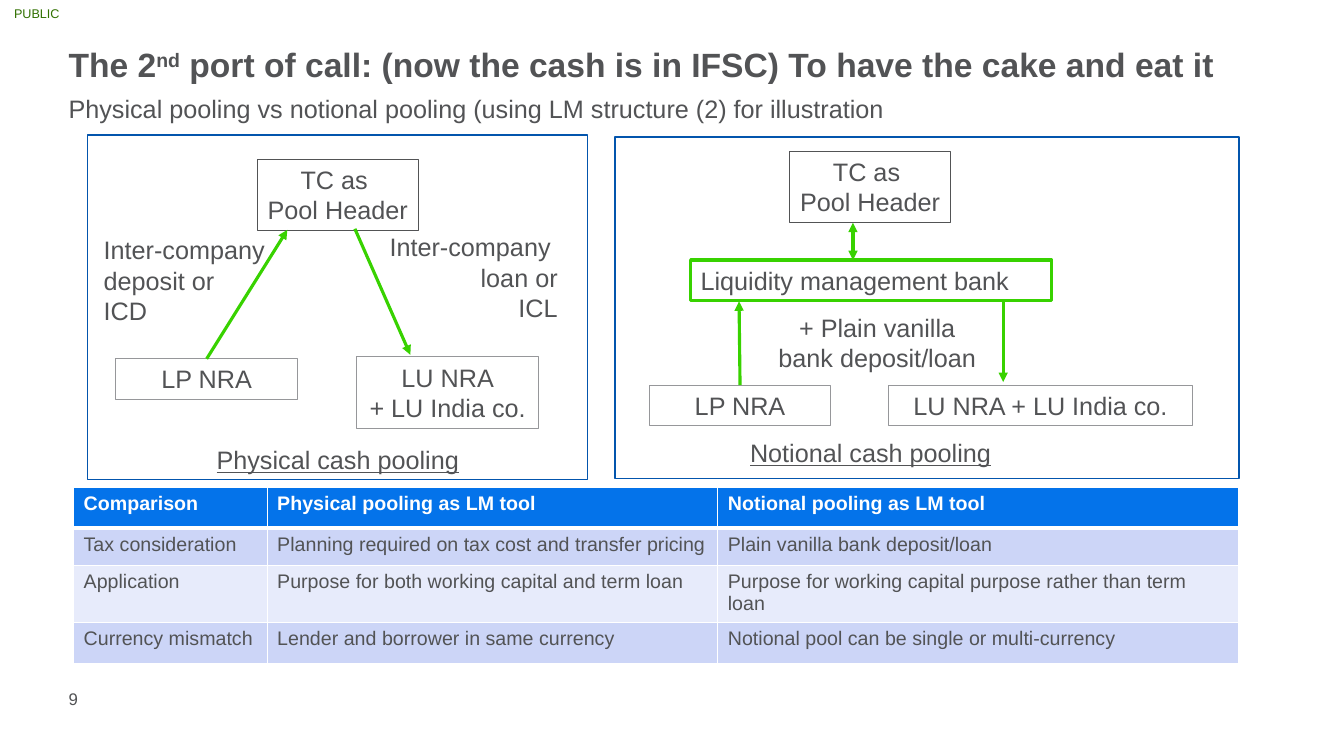
from lxml.etree import SubElement
from pptx import Presentation
from pptx.dml.color import RGBColor
from pptx.enum.shapes import MSO_CONNECTOR, MSO_SHAPE
from pptx.enum.text import MSO_ANCHOR, MSO_AUTO_SIZE, PP_ALIGN
from pptx.oxml.ns import qn
from pptx.util import Inches, Pt

COLOURS = {
    "text": "525355", "public": "317100", "frame": "0355AD", "account": "96979A",
    "flow": "38D200", "header": "0473EA", "band": "CCD5F7", "plain": "E7EBFB",
    "white": "FFFFFF",
}
LEFT, CENTRE, RIGHT = PP_ALIGN.LEFT, PP_ALIGN.CENTER, PP_ALIGN.RIGHT


def rgb(name):
    return RGBColor.from_string(COLOURS[name])


def write(frame, text, size=18, colour="text", bold=False, underline=False,
          align=LEFT, leading=None, wrap=True, inset=None, anchor=MSO_ANCHOR.TOP):
    """Fill a text frame: one paragraph a line, superscripts between ^ marks."""
    frame.word_wrap = wrap
    frame.vertical_anchor = anchor
    if inset is not None:
        frame.margin_left = frame.margin_right = Inches(inset)
        frame.margin_top = frame.margin_bottom = Inches(inset)
    for number, line in enumerate(text.split("\n")):
        paragraph = frame.add_paragraph() if number else frame.paragraphs[0]
        paragraph.alignment = align
        paragraph.space_before = Pt(0)
        if leading:
            paragraph.line_spacing = Pt(leading)
        for part, words in enumerate(line.split("^")):
            run = paragraph.add_run()
            run.text = words
            run.font.name = "Arial"
            run.font.size = Pt(size)
            run.font.bold = bold
            run.font.underline = underline
            run.font.color.rgb = rgb(colour)
            if part % 2:
                run._r.get_or_add_rPr().set("baseline", "30000")


class PoolingSlide:
    def __init__(self, deck):
        self.slide = deck.slides.add_slide(deck.slide_layouts[1])
        self.shapes = self.slide.shapes

    def placeholder(self, index, at, text, **style):
        holder = self.slide.placeholders[index]
        holder.left, holder.top, holder.width, holder.height = map(Inches, at)
        holder.text_frame.auto_size = MSO_AUTO_SIZE.NONE
        if index:
            properties = holder.text_frame.paragraphs[0]._p.get_or_add_pPr()
            properties.set("marL", "0")
            properties.set("indent", "0")
            SubElement(properties, qn("a:buNone"))
        write(holder.text_frame, text, leading=28, inset=0, **style)

    def label(self, at, text, **style):
        write(self.shapes.add_textbox(*map(Inches, at)).text_frame, text, **style)

    def box(self, at, colour, weight, text=None, **style):
        box = self.shapes.add_shape(MSO_SHAPE.RECTANGLE, *map(Inches, at))
        box.shadow.inherit = False
        box.fill.background()
        box.line.color.rgb = rgb(colour)
        box.line.width = Pt(weight)
        if text:
            write(box.text_frame, text, **style)

    def arrow(self, start, end, ends=("tailEnd",)):
        arrow = self.shapes.add_connector(
            MSO_CONNECTOR.STRAIGHT, *map(Inches, start + end))
        arrow.line.color.rgb = rgb("flow")
        arrow.line.width = Pt(2.25)
        for end_name in ends:
            SubElement(arrow.line._get_or_add_ln(), qn(f"a:{end_name}"), type="triangle")
        SubElement(arrow._element.spPr, qn("a:effectLst"))

    def border(self, cell, side, weight):
        line = SubElement(cell._tc.get_or_add_tcPr(), qn(f"a:ln{side}"), w=str(Pt(weight)))
        fill = SubElement(line, qn("a:solidFill"))
        SubElement(fill, qn("a:srgbClr"), val=COLOURS["white"])

    def table(self, at, widths, heights, rows):
        table = self.shapes.add_table(
            len(rows), len(widths), *map(Inches, at), Inches(sum(widths)),
            Inches(sum(heights))).table
        for column, width in zip(table.columns, widths):
            column.width = Inches(width)
        for r, (height, texts) in enumerate(zip(heights, rows)):
            table.rows[r].height = Inches(height)
            fill = "header" if r == 0 else "band" if r % 2 else "plain"
            for c, text in enumerate(texts):
                cell = table.cell(r, c)
                for side in "LRTB":
                    under_header = (r, side) in ((0, "B"), (1, "T"))
                    self.border(cell, side, 3 if under_header else 1)
                cell.fill.solid()
                cell.fill.fore_color.rgb = rgb(fill)
                write(cell.text_frame, text, size=14, bold=r == 0,
                      colour="text" if r else "white")


def main():
    deck = Presentation()
    deck.slide_width, deck.slide_height = Inches(13.33), Inches(7.5)
    page = PoolingSlide(deck)

    page.label((0, 0, 0.73, 0.26), "PUBLIC", size=9, colour="public", align=CENTRE,
               inset=0, anchor=MSO_ANCHOR.MIDDLE)
    page.label((0.68, 6.84, 1.34, 0.17), "9", size=12, leading=14, inset=0)
    page.placeholder(
        0, (0.68, 0.45, 11.6, 0.38), size=24, bold=True,
        text="The 2^nd^ port of call: (now the cash is in IFSC) To have the cake and eat it")
    page.placeholder(
        1, (0.68, 0.84, 10.94, 0.39),
        "Physical pooling vs notional pooling (using LM structure (2) for illustration")

    for frame in ((0.87, 1.34, 4.96, 3.42), (6.1, 1.36, 6.19, 3.39)):
        page.box(frame, "frame", 1)
    for left, top in ((2.55, 1.58), (7.83, 1.5)):
        page.box((left, top, 1.6, 0.71), "text", 0.75, "TC as \nPool Header",
                 align=CENTRE, wrap=False)
    for at, account in (
        ((1.15, 3.56, 1.8, 0.4), "LP NRA"),
        ((3.54, 3.54, 1.8, 0.71), "LU NRA\n+ LU India co."),
        ((6.44, 3.82, 1.8, 0.4), "LP NRA"),
        ((8.81, 3.82, 3.02, 0.4), "LU NRA + LU India co."),
    ):
        page.box(at, "account", 0.75, account, align=CENTRE)
    page.box((6.85, 2.58, 3.58, 0.4), "flow", 2.25, "Liquidity management bank")

    for start, end in (
        ((2.05, 3.56), (2.85, 2.28)),
        ((3.52, 2.27), (4.07, 3.52)),
        ((7.34, 3.82), (7.33, 2.99)),
        ((9.95, 2.99), (9.95, 3.79)),
    ):
        page.arrow(start, end)
    page.arrow((8.46, 2.21), (8.46, 2.58), ends=("headEnd", "tailEnd"))

    page.label((0.93, 2.28, 1.81, 1.01), "Inter-company\ndeposit or\nICD", wrap=False)
    page.label((3.56, 2.25, 2.07, 1.01), "Inter-company \nloan or\nICL", align=RIGHT)
    page.label((7.61, 3.05, 2.18, 0.71), "+ Plain vanilla\nbank deposit/loan",
               align=CENTRE, wrap=False)
    page.label((2.05, 4.36, 2.7, 0.4), "Physical cash pooling", underline=True)
    page.label((7.34, 4.29, 2.61, 0.4), "Notional cash pooling", underline=True)

    page.table((0.73, 4.84), (1.92, 4.47, 5.17), (0.4, 0.37, 0.57, 0.4), (
        ("Comparison", "Physical pooling as LM tool", "Notional pooling as LM tool"),
        ("Tax consideration", "Planning required on tax cost and transfer pricing",
         "Plain vanilla bank deposit/loan"),
        ("Application", "Purpose for both working capital and term loan",
         "Purpose for working capital purpose rather than term loan"),
        ("Currency mismatch", "Lender and borrower in same currency",
         "Notional pool can be single or multi-currency"),
    ))
    deck.save("out.pptx")


if __name__ == "__main__":
    main()
